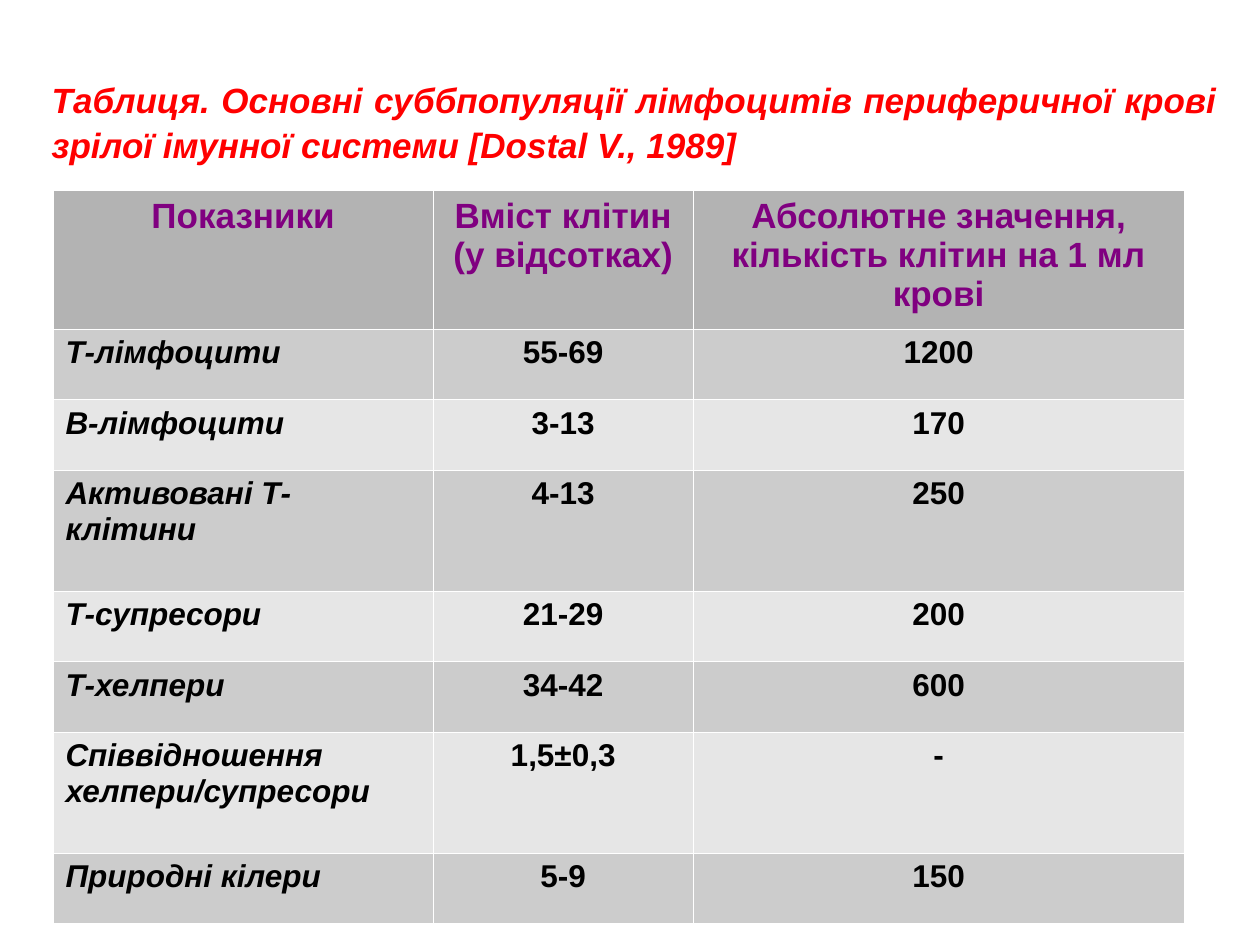
from lxml import etree
from pptx import Presentation
from pptx.dml.color import RGBColor
from pptx.enum.text import MSO_ANCHOR, MSO_AUTO_SIZE, PP_ALIGN
from pptx.oxml.ns import qn
from pptx.util import Inches, Pt

TOP = MSO_ANCHOR.TOP
NO_FIT = MSO_AUTO_SIZE.NONE
LEFT, CENTER, JUSTIFY = PP_ALIGN.LEFT, PP_ALIGN.CENTER, PP_ALIGN.JUSTIFY

RED = RGBColor(0xFF, 0x00, 0x00)
PURPLE = RGBColor(0x80, 0x00, 0x80)
BLACK = RGBColor(0x00, 0x00, 0x00)
WHITE = RGBColor(0xFF, 0xFF, 0xFF)
HEADER_GRAY = RGBColor(0xB3, 0xB3, 0xB3)
BAND_GRAYS = (RGBColor(0xCC, 0xCC, 0xCC), RGBColor(0xE6, 0xE6, 0xE6))

TITLE = ("Таблиця. Основні суббпопуляції лімфоцитів периферичної крові "
         "зрілої імунної системи [Dostal V., 1989]")
ROWS = [
    ("Показники", "Вміст клітин (у відсотках)",
     "Абсолютне значення, кількість клітин на 1 мл крові"),
    ("Т-лімфоцити", "55-69", "1200"),
    ("В-лімфоцити", "3-13", "170"),
    ("Активовані Т-клітини", "4-13", "250"),
    ("Т-супресори", "21-29", "200"),
    ("Т-хелпери", "34-42", "600"),
    ("Співвідношення хелпери/супресори", "1,5±0,3", "-"),
    ("Природні кілери", "5-9", "150"),
]
COLUMN_WIDTHS = (3.02, 2.06, 3.9)
HEADER_HEIGHT, SINGLE_HEIGHT, DOUBLE_HEIGHT = 1.1, 0.56, 0.96
DOUBLE_ROWS = (3, 6)
BORDER_WIDTH = Pt(0.06)


def format_paragraph(para, align, size, color, italic):
    para.alignment = align
    for span in para.runs:
        span.font.name = "Arial"
        span.font.size = Pt(size)
        span.font.bold = True
        span.font.italic = italic
        span.font.color.rgb = color


def add_borders(cell):
    properties = cell._tc.get_or_add_tcPr()
    for side in ("a:lnL", "a:lnR", "a:lnT", "a:lnB"):
        line = etree.SubElement(properties, qn(side), w=str(BORDER_WIDTH))
        fill = etree.SubElement(line, qn("a:solidFill"))
        etree.SubElement(fill, qn("a:srgbClr"), val=str(WHITE))


def add_title(page):
    title = page.shapes.title
    title.left, title.top = Inches(0.31), Inches(0.55)
    title.width, title.height = Inches(9.45), Inches(0.76)
    frame = title.text_frame
    frame.text = TITLE
    frame.word_wrap = True
    frame.auto_size = NO_FIT
    frame.vertical_anchor = TOP
    para = frame.paragraphs[0]
    para.line_spacing = 1.07
    format_paragraph(para, JUSTIFY, 20, RED, True)


def add_cell_table(page):
    heights = [HEADER_HEIGHT] + [
        DOUBLE_HEIGHT if row in DOUBLE_ROWS else SINGLE_HEIGHT
        for row in range(1, len(ROWS))]
    table = page.shapes.add_table(
        len(ROWS), len(COLUMN_WIDTHS), Inches(0.42), Inches(1.51),
        Inches(sum(COLUMN_WIDTHS)), Inches(sum(heights))).table
    for column, width in zip(table.columns, COLUMN_WIDTHS):
        column.width = Inches(width)
    for row, (values, height) in enumerate(zip(ROWS, heights)):
        table.rows[row].height = Inches(height)
        header = row == 0
        for column, value in enumerate(values):
            label = column == 0 and not header
            cell = table.cell(row, column)
            cell.text_frame.text = value
            add_borders(cell)
            cell.fill.solid()
            cell.fill.fore_color.rgb = HEADER_GRAY if header else BAND_GRAYS[(row - 1) % 2]
            format_paragraph(cell.text_frame.paragraphs[0],
                             LEFT if label else CENTER,
                             20 if header else 18,
                             PURPLE if header else BLACK, label)


def main():
    deck = Presentation()
    deck.slide_width, deck.slide_height = Inches(10), Inches(7.5)
    page = deck.slides.add_slide(deck.slide_layouts[5])
    add_title(page)
    add_cell_table(page)
    deck.save("out.pptx")


if __name__ == "__main__":
    main()
